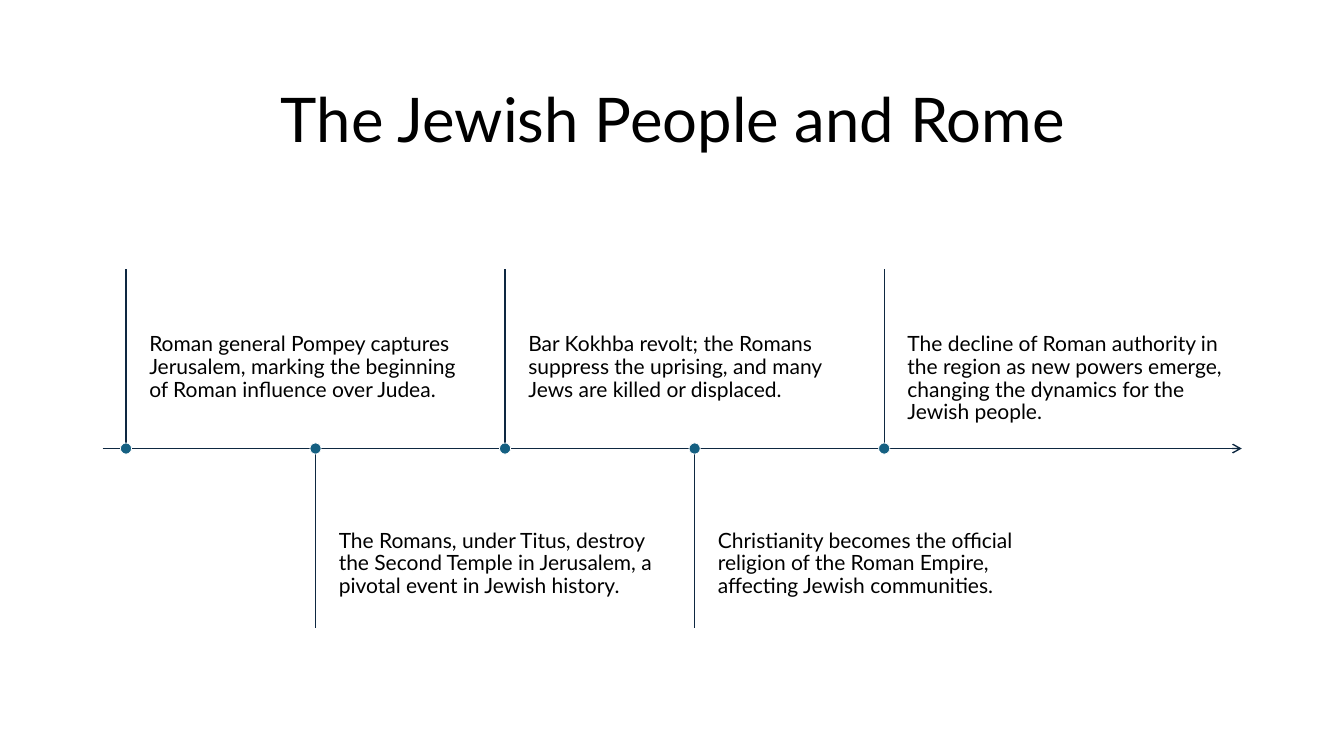
from lxml import etree
from pptx import Presentation
from pptx.dml.color import RGBColor
from pptx.enum import shapes, text
from pptx.oxml import ns
from pptx.util import Pt

FONT = "Lato"
BLACK, NAVY, TEAL, WHITE = "000000", "0E2841", "156082", "FFFFFF"

AXIS_Y, AXIS_LEFT, AXIS_RIGHT = 320.4, 73.4, 887
FIRST_X, STEP = 90, 135.4
STEM, DOT = 128, 8
TEXT_GAP, TEXT_WIDTH = 16.6, 226
UPPER_TEXT, LOWER_TEXT = (238.3, 82.8), (378.7, 69.8)  # top, height

EVENTS = [
    "Roman general Pompey captures Jerusalem, marking the beginning of Roman influence over Judea.",
    "The Romans, under Titus, destroy the Second Temple in Jerusalem, a pivotal event in Jewish history.",
    "Bar Kokhba revolt; the Romans suppress the uprising, and many Jews are killed or displaced.",
    "Christianity becomes the official religion of the Roman Empire, affecting Jewish communities.",
    "The decline of Roman authority in the region as new powers emerge, "
    "changing the dynamics for the Jewish people.",
]


def color(value):
    return RGBColor.from_string(value)


def add_text(page, words, left, top, width, height, size):
    box = page.shapes.add_textbox(Pt(left), Pt(top), Pt(width), Pt(height))
    frame = box.text_frame
    frame.word_wrap = True
    frame.margin_left = frame.margin_right = 0
    frame.margin_top = frame.margin_bottom = 0
    para = frame.paragraphs[0]
    para.text = words
    para.line_spacing = 0.9
    para.font.name = FONT
    para.font.size = Pt(size)
    para.font.color.rgb = color(BLACK)
    return frame


def add_title(page, words):
    frame = add_text(page, words, 120.2, 43.2, 721.4, 89.3, 44)
    frame.vertical_anchor = text.MSO_ANCHOR.MIDDLE
    frame.paragraphs[0].alignment = text.PP_ALIGN.CENTER


def add_line(page, x1, y1, x2, y2, arrow=False):
    line = page.shapes.add_connector(
        shapes.MSO_CONNECTOR.STRAIGHT, Pt(x1), Pt(y1), Pt(x2), Pt(y2))
    line.line.color.rgb = color(NAVY)
    line.line.width = Pt(1)
    if arrow:
        etree.SubElement(line.line._get_or_add_ln(), ns.qn("a:tailEnd"), type="arrow")
    etree.SubElement(line._element.spPr, ns.qn("a:effectLst"))


def add_dot(page, x, y):
    dot = page.shapes.add_shape(
        shapes.MSO_SHAPE.OVAL, Pt(x - DOT / 2), Pt(y - DOT / 2), Pt(DOT), Pt(DOT))
    dot.shadow.inherit = False
    dot.fill.solid()
    dot.fill.fore_color.rgb = color(TEAL)
    dot.line.color.rgb = color(WHITE)
    dot.line.width = Pt(0.5)


def add_event(page, index, words):
    """Place events along the axis, alternately above and below it."""
    x = FIRST_X + index * STEP
    above = index % 2 == 0
    top, height = UPPER_TEXT if above else LOWER_TEXT
    add_text(page, words, x + TEXT_GAP, top, TEXT_WIDTH, height, 15)
    stem_top = AXIS_Y - STEM if above else AXIS_Y
    add_line(page, x, stem_top, x, stem_top + STEM)
    add_dot(page, x, AXIS_Y)


def main():
    deck = Presentation()
    deck.slide_width, deck.slide_height = Pt(960), Pt(540)
    page = deck.slides.add_slide(deck.slide_layouts[6])
    add_title(page, "The Jewish People and Rome")
    add_line(page, AXIS_LEFT, AXIS_Y, AXIS_RIGHT, AXIS_Y, arrow=True)
    for index, words in enumerate(EVENTS):
        add_event(page, index, words)
    deck.save("out.pptx")


if __name__ == "__main__":
    main()
